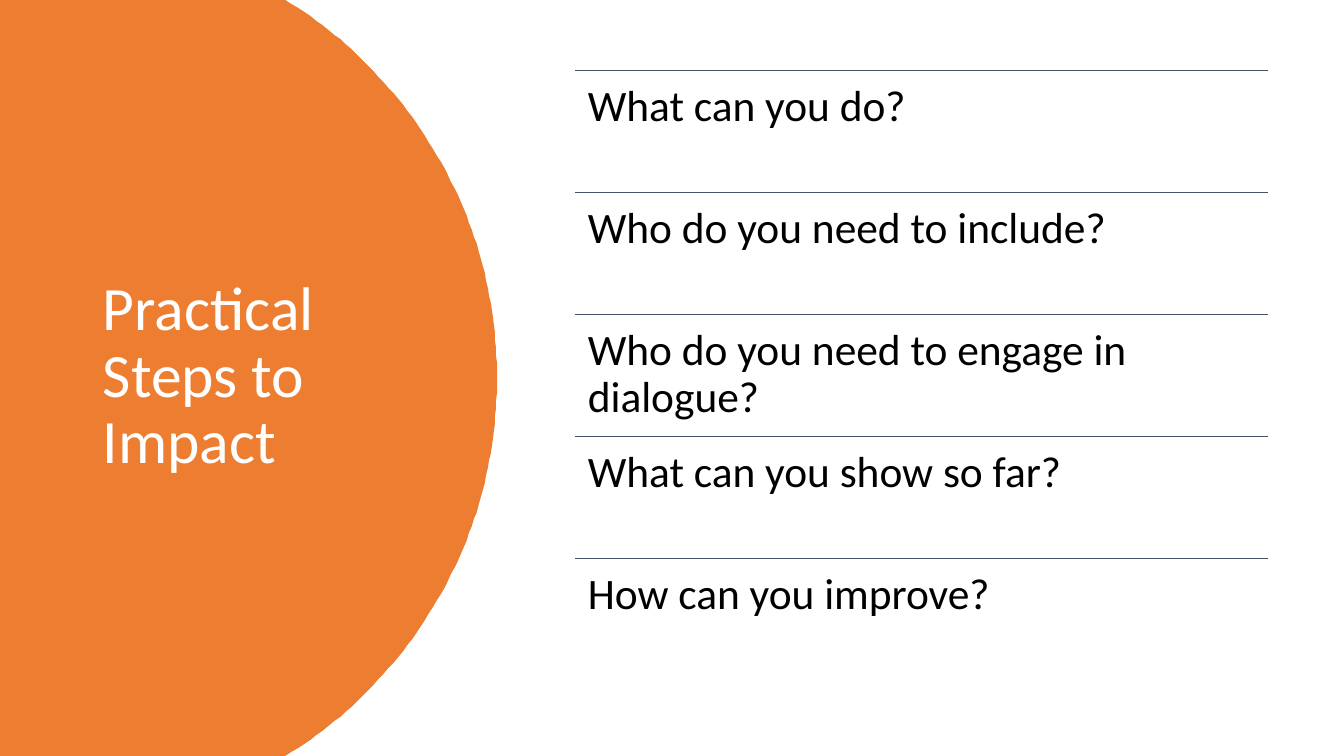
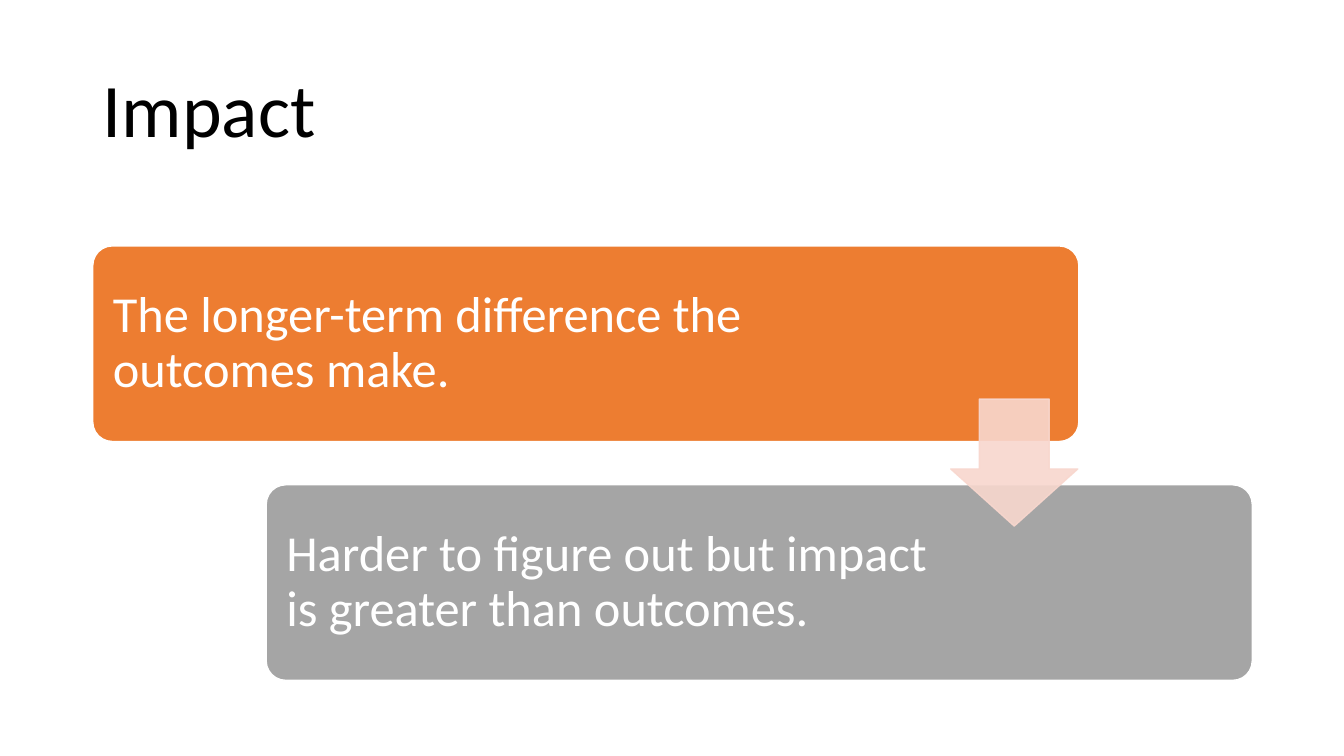
import math
from lxml import etree
from pptx import Presentation
from pptx import util as u
from pptx.dml.color import RGBColor
from pptx.enum import shapes, text
from pptx.oxml.ns import qn

PX = 9144  # EMU: 100 px to the inch
PAGE_W, PAGE_H = 1333, 750
FONT = "Calibri"
ORANGE = RGBColor(0xED, 0x7D, 0x31)
GRAY = RGBColor(0xA5, 0xA5, 0xA5)
NAVY = RGBColor(0x44, 0x54, 0x6A)
PINK = RGBColor(0xF8, 0xD7, 0xCE)
WHITE = RGBColor(255, 255, 255)
BLACK = RGBColor(0, 0, 0)


def px(*lengths):
    return [u.Emu(round(length * PX)) for length in lengths]


def set_text(shape, words, size, color, anchor, inset=None):
    frame = shape.text_frame
    frame.text = words
    frame.word_wrap = True
    frame.auto_size = text.MSO_AUTO_SIZE.NONE
    frame.vertical_anchor = anchor
    if inset is not None:
        margin = px(inset)[0]
        frame.margin_left = frame.margin_right = margin
        frame.margin_top = frame.margin_bottom = margin
    para = frame.paragraphs[0]
    para.alignment = text.PP_ALIGN.LEFT
    para.line_spacing = 0.9
    font = para.runs[0].font
    font.name, font.size, font.color.rgb = FONT, u.Pt(size), color


def add_text(page, box, words, size, color, anchor, inset):
    set_text(page.shapes.add_textbox(*px(*box)), words, size, color, anchor, inset)


def add_titled_page(deck, title, box, size, color):
    page = deck.slides.add_slide(deck.slide_layouts[5])
    holder = page.shapes.title
    holder.left, holder.top, holder.width, holder.height = px(*box)
    set_text(holder, title, size, color, text.MSO_ANCHOR.MIDDLE)
    return page


def paint(shape, fill, line=None):
    shape.shadow.inherit = False
    shape.fill.solid()
    shape.fill.fore_color.rgb = fill
    if line is None:
        shape.line.fill.background()
    else:
        shape.line.color.rgb = line
        shape.line.width = u.Pt(1)


def add_round_panel(page, width, bulge):
    """Fill the left of the page up to an arc that bulges out to width."""
    half = PAGE_H / 2
    radius = (bulge ** 2 + half ** 2) / (2 * bulge)
    sweep = math.asin(half / radius)
    steps = 120
    angles = [sweep * (2 * step / steps - 1) for step in range(steps + 1)]
    arc = [(width - radius + radius * math.cos(angle), half + radius * math.sin(angle))
           for angle in angles]
    builder = page.shapes.build_freeform(0, 0, scale=PX)
    builder.add_line_segments(arc + [(0, PAGE_H)], close=True)
    panel = builder.convert_to_shape()
    paint(panel, ORANGE)
    page.shapes.title.element.addprevious(panel.element)


def add_ruled_list(page, box, items):
    left, top, width, height = box
    row = height / len(items)
    for index, words in enumerate(items):
        y = top + index * row
        rule = page.shapes.add_connector(
            shapes.MSO_CONNECTOR.STRAIGHT, *px(left, y, left + width, y))
        rule.line.color.rgb = NAVY
        rule.line.width = u.Pt(1)
        etree.SubElement(rule.element.spPr, qn("a:effectLst"))
        add_text(page, (left, y, width, row), words, 31, BLACK, text.MSO_ANCHOR.TOP, 13)


def add_down_arrow(page, box):
    arrow = page.shapes.add_shape(shapes.MSO_SHAPE.DOWN_ARROW, *px(*box))
    arrow.adjustments[0], arrow.adjustments[1] = 0.55, 0.45
    paint(arrow, PINK, PINK)
    for color in arrow.element.spPr.iter(qn("a:srgbClr")):
        etree.SubElement(color, qn("a:alpha"), val="90000")


def add_staircase(page, box, steps):
    """Place two cards, the second shifted right, with an arrow between them."""
    left, top, width, height = box
    card_w, card_h, pad, arrow = 978, 194, 5, 126
    for index, (words, text_w, color) in enumerate(steps):
        x = left + index * (width - card_w)
        y = top + index * (height - card_h)
        card = page.shapes.add_shape(
            shapes.MSO_SHAPE.ROUNDED_RECTANGLE, *px(x, y, card_w, card_h))
        card.adjustments[0] = 0.1
        paint(card, color, WHITE)
        add_text(page, (x + pad, y + pad, text_w, card_h - 2 * pad), words, 36, WHITE,
                 text.MSO_ANCHOR.MIDDLE, 15)
    add_down_arrow(page, (left + card_w - arrow - 1, top + 152, arrow, arrow))


def build_steps_page(deck):
    page = add_titled_page(deck, "Practical Steps to Impact", (92, 70, 323, 609), 44, WHITE)
    add_round_panel(page, 493, 210)
    add_ruled_list(page, (570, 70, 688, 605), [
        "What can you do?",
        "Who do you need to include?",
        "Who do you need to engage in dialogue?",
        "What can you show so far?",
        "How can you improve?",
    ])


def build_impact_page(deck):
    page = add_titled_page(deck, "Impact", (92, 40, 1150, 145), 54, BLACK)
    add_staircase(page, (92, 244, 1150, 431), [
        ("The longer-term difference the outcomes make.", 777, ORANGE),
        ("Harder to figure out but impact is greater than outcomes.", 667, GRAY),
    ])


def main():
    deck = Presentation()
    deck.slide_width, deck.slide_height = px(PAGE_W, PAGE_H)
    build_steps_page(deck)
    build_impact_page(deck)
    deck.save("out.pptx")


if __name__ == "__main__":
    main()
